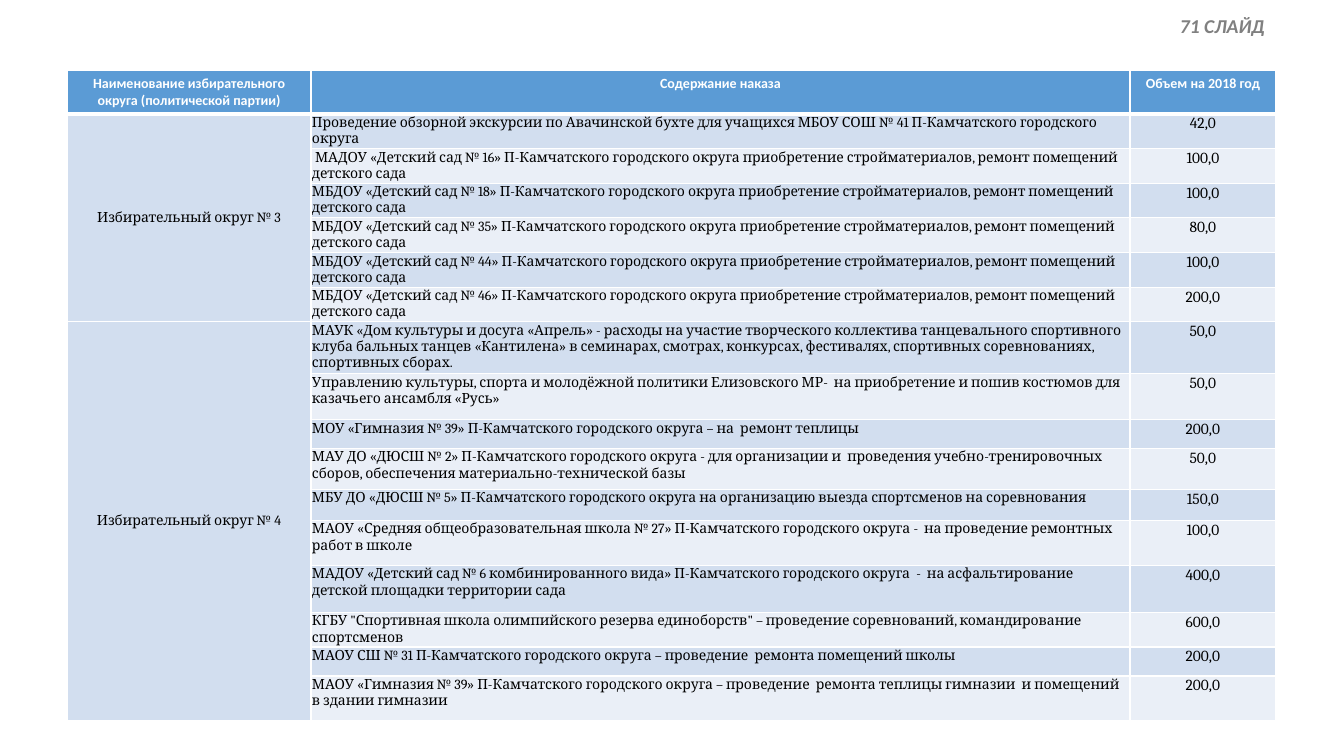
from lxml import etree
from pptx import Presentation
from pptx import util as u
from pptx.dml.color import RGBColor
from pptx.enum import text
from pptx.oxml.ns import qn

PX = 914400 / 100.8
C = {"white": "FFFFFF", "black": "000000", "grey": "808080",
     "header": "5B9BD5", "odd": "D2DEEF", "even": "EAEFF7"}
HEADERS = ["Наименование избирательного округа (политической партии)",
           "Содержание наказа", "Объем на 2018 год"]
REPAIR = "П-Камчатского городского округа приобретение стройматериалов, ремонт помещений детского сада"
DISTRICTS = [
    ("Избирательный округ № 3", [
        (26, "Проведение обзорной экскурсии по Авачинской бухте для учащихся МБОУ СОШ № 41 П-Камчатского городского округа", "42,0"),
        (26, f" МАДОУ «Детский сад № 16» {REPAIR}", "100,0"),
        (26, f"МБДОУ «Детский сад № 18» {REPAIR}", "100,0"),
        (26, f"МБДОУ «Детский сад № 35» {REPAIR}", "80,0"),
        (26, f"МБДОУ «Детский сад № 44» {REPAIR}", "100,0"),
        (26, f"МБДОУ «Детский сад № 46» {REPAIR}", "200,0"),
    ]),
    ("Избирательный округ № 4", [
        (44, "МАУК «Дом культуры и досуга «Апрель» - расходы на участие творческого коллектива танцевального спортивного клуба бальных танцев «Кантилена» в семинарах, смотрах, конкурсах, фестивалях, спортивных соревнованиях, спортивных сборах.", "50,0"),
        (46, "Управлению культуры, спорта и молодёжной политики Елизовского МР-  на приобретение и пошив костюмов для казачьего ансамбля «Русь»", "50,0"),
        (29, "МОУ «Гимназия № 39» П-Камчатского городского округа – на  ремонт теплицы", "200,0"),
        (41, "МАУ ДО «ДЮСШ № 2» П-Камчатского городского округа - для организации и  проведения учебно-тренировочных сборов, обеспечения материально-технической базы", "50,0"),
        (31, "МБУ ДО «ДЮСШ № 5» П-Камчатского городского округа на организацию выезда спортсменов на соревнования", "150,0"),
        (45, "МАОУ «Средняя общеобразовательная школа № 27» П-Камчатского городского округа -  на проведение ремонтных работ в школе", "100,0"),
        (47, "МАДОУ «Детский сад № 6 комбинированного вида» П-Камчатского городского округа  -  на асфальтирование детской площадки территории сада", "400,0"),
        (21, "КГБУ \"Спортивная школа олимпийского резерва единоборств\" – проведение соревнований, командирование спортсменов", "600,0"),
        (29, "МАОУ СШ № 31 П-Камчатского городского округа – проведение  ремонта помещений школы", "200,0"),
        (45, "МАОУ «Гимназия № 39» П-Камчатского городского округа – проведение  ремонта теплицы гимназии  и помещений в здании гимназии", "200,0"),
    ]),
]


def px(n):
    return u.Emu(round(n * PX))


def style(p, words, font, size, color, bold=False, italic=False, align=text.PP_ALIGN.LEFT):
    p.add_run().text = words
    p.alignment = align
    f = p.font
    f.name, f.size, f.bold, f.italic = font, u.Pt(size), bold, italic
    f.color.rgb = RGBColor.from_string(C[color])


prs = Presentation()
prs.slide_width, prs.slide_height = px(1344), px(756)
s = prs.slides.add_slide(prs.slide_layouts[6])

tf = s.shapes.add_textbox(px(1170), px(9), px(110), px(34)).text_frame
tf.word_wrap = False
tf.auto_size = text.MSO_AUTO_SIZE.SHAPE_TO_FIT_TEXT
style(tf.paragraphs[0], "71 СЛАЙД", "Calibri", 14, "grey", True, True)

orders = [order for _, rows in DISTRICTS for order in rows]
heights = [42] + [h for h, _, _ in orders]
table = s.shapes.add_table(len(heights), 3, px(67), px(70), px(1209), px(sum(heights))).table
for col, width in zip(table.columns, (244, 819, 146)):
    col.width = px(width)

for i, (row, height) in enumerate(zip(table.rows, heights)):
    row.height = px(height)
    for j, cell in enumerate(row.cells):
        tcPr = cell._tc.get_or_add_tcPr()
        for side in "LRTB":
            thick = (i, side) in ((0, "B"), (1, "T"))
            ln = etree.SubElement(tcPr, qn(f"a:ln{side}"), w=str(u.Pt(3 if thick else 1)))
            fill = etree.SubElement(ln, qn("a:solidFill"))
            etree.SubElement(fill, qn("a:srgbClr"), val=C["white"])
        band = "header" if i == 0 else "odd" if i % 2 or j == 0 else "even"
        cell.fill.solid()
        cell.fill.fore_color.rgb = RGBColor.from_string(C[band])
        p = cell.text_frame.paragraphs[0]
        if i == 0:
            style(p, HEADERS[j], "Calibri", 10, "white", True, align=text.PP_ALIGN.CENTER)
        elif j:
            cell.margin_left = cell.margin_right = cell.margin_top = px(1)
            cell.margin_bottom = 0
            align = text.PP_ALIGN.LEFT if j == 1 else text.PP_ALIGN.CENTER
            style(p, orders[i - 1][j], "Cambria", 9 + j, "black", align=align)

top = 1
for name, rows in DISTRICTS:
    cell = table.cell(top, 0)
    cell.merge(table.cell(top + len(rows) - 1, 0))
    cell.vertical_anchor = text.MSO_ANCHOR.MIDDLE
    style(cell.text_frame.paragraphs[0], name, "Cambria", 10, "black", align=text.PP_ALIGN.CENTER)
    top += len(rows)

prs.save("out.pptx")
